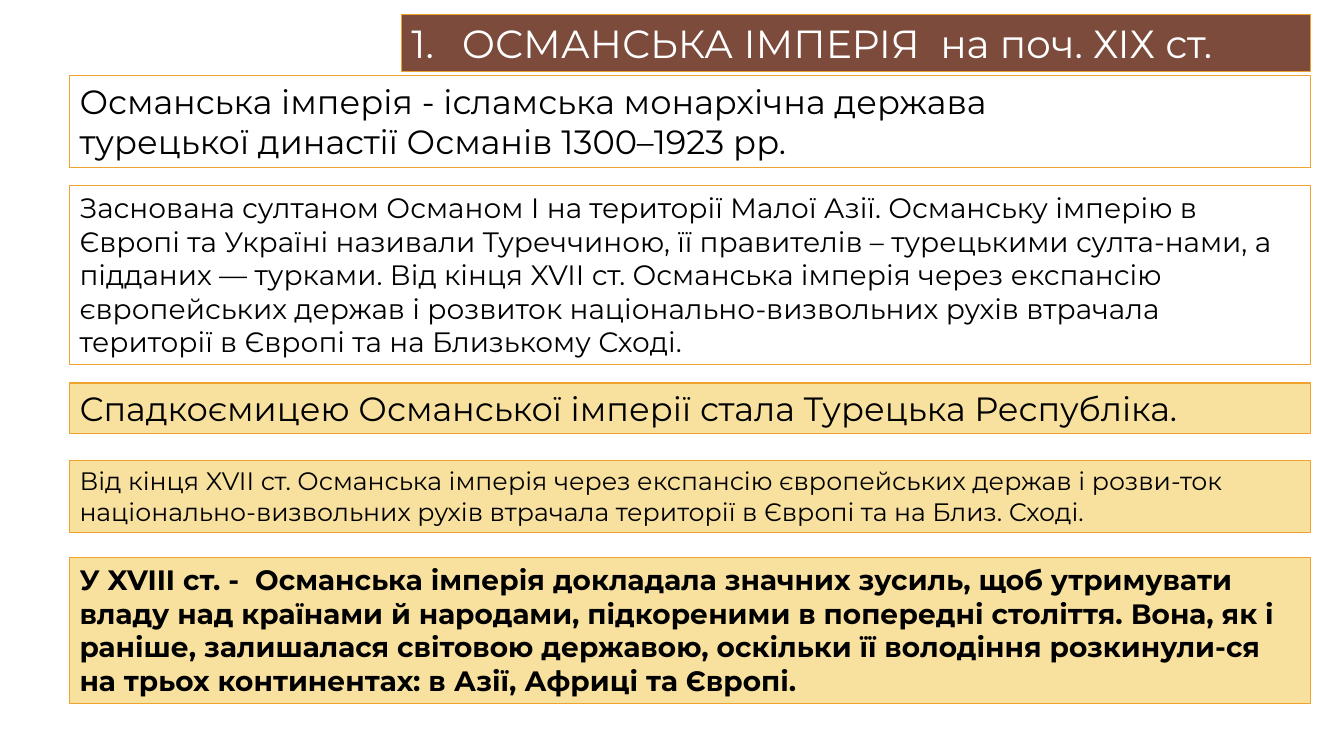
from lxml import etree
from pptx import Presentation
from pptx import util as u
from pptx.dml.color import RGBColor
from pptx.enum import shapes, text
from pptx.oxml.ns import qn

COLORS = {
    "brown": "7C4B3B",
    "sand": "F8E19F",
    "white": "FFFFFF",
    "black": "000000",
    "amber": "F0A22E",
}
FONT = "Montserrat"
LEFT, RIGHT = 0.69, 13.0

DEFINITION = [
    "Османська імперія - ісламська монархічна держава",
    "турецької династії Османів 1300–1923 рр.",
]
FOUNDING = [
    "Заснована султаном Османом І на території Малої Азії. Османську імперію в "
    "Європі та Україні називали Туреччиною, її правителів – турецькими султа-нами, "
    "а підданих — турками. Від кінця XVII ст. Османська імперія через експансію "
    "європейських держав і розвиток національно-визвольних рухів втрачала "
    "території в Європі та на Близькому Сході."
]
SUCCESSOR = ["Спадкоємицею Османської імперії стала Турецька Республіка."]
DECLINE = [
    "Від кінця XVII ст. Османська імперія через експансію європейських держав і "
    "розви-ток національно-визвольних рухів втрачала території в Європі та на "
    "Близ. Сході."
]
EFFORTS = [
    "У XVIII ст. -  Османська імперія докладала значних зусиль, щоб утримувати "
    "владу над країнами й народами, підкореними в попередні століття. Вона, як і "
    "раніше, залишалася світовою державою, оскільки її володіння розкинули-ся на "
    "трьох континентах: в Азії, Африці та Європі."
]


def rgb(name):
    return RGBColor.from_string(COLORS[name])


def write(shape, lines, size, color="black", bold=False, numbered=False):
    frame = shape.text_frame
    frame.word_wrap = True
    frame.auto_size = text.MSO_AUTO_SIZE.NONE
    frame.vertical_anchor = text.MSO_ANCHOR.TOP
    for index, line in enumerate(lines):
        paragraph = frame.add_paragraph() if index else frame.paragraphs[0]
        paragraph.alignment = text.PP_ALIGN.LEFT
        if numbered:
            number_line(paragraph)
        run = paragraph.add_run()
        run.text = line
        run.font.name = FONT
        run.font.size = u.Pt(size)
        run.font.bold = bold
        run.font.color.rgb = rgb(color)


def number_line(paragraph):
    """Give the paragraph an automatic "1." with a hanging indent."""
    properties = paragraph._p.get_or_add_pPr()
    properties.set("marL", str(u.Inches(0.5)))
    properties.set("indent", str(-u.Inches(0.5)))
    etree.SubElement(properties, qn("a:buFont"), typeface="+mj-lt")
    etree.SubElement(properties, qn("a:buAutoNum"), type="arabicPeriod")


def paint(shape, fill):
    if fill:
        shape.fill.solid()
        shape.fill.fore_color.rgb = rgb(fill)
    else:
        shape.fill.background()
    shape.line.color.rgb = rgb("amber")
    shape.line.width = u.Pt(0.75)


def place_title(slide, left, top, width, height):
    title = slide.shapes.title
    title.left, title.top = u.Inches(left), u.Inches(top)
    title.width, title.height = u.Inches(width), u.Inches(height)
    paint(title, "brown")
    write(title, ["ОСМАНСЬКА ІМПЕРІЯ  на поч. ХІХ ст."], 28, color="white", numbered=True)


def add_panel(slide, top, height, lines, size, fill=None, bold=False):
    panel = slide.shapes.add_shape(
        shapes.MSO_SHAPE.RECTANGLE,
        u.Inches(LEFT), u.Inches(top), u.Inches(RIGHT - LEFT), u.Inches(height),
    )
    panel.shadow.inherit = False
    paint(panel, fill)
    write(panel, lines, size, bold=bold)


def main():
    deck = Presentation()
    deck.slide_width, deck.slide_height = u.Inches(13.33), u.Inches(7.5)
    slide = deck.slides.add_slide(deck.slide_layouts[5])
    place_title(slide, 3.98, 0.14, RIGHT - 3.98, 0.57)
    add_panel(slide, 0.75, 0.91, DEFINITION, 24, fill="white")
    add_panel(slide, 1.84, 1.78, FOUNDING, 20)
    add_panel(slide, 3.8, 0.5, SUCCESSOR, 24, fill="sand")
    add_panel(slide, 4.57, 0.71, DECLINE, 18, fill="sand")
    add_panel(slide, 5.53, 1.45, EFFORTS, 20, fill="sand", bold=True)
    deck.save("out.pptx")


if __name__ == "__main__":
    main()
